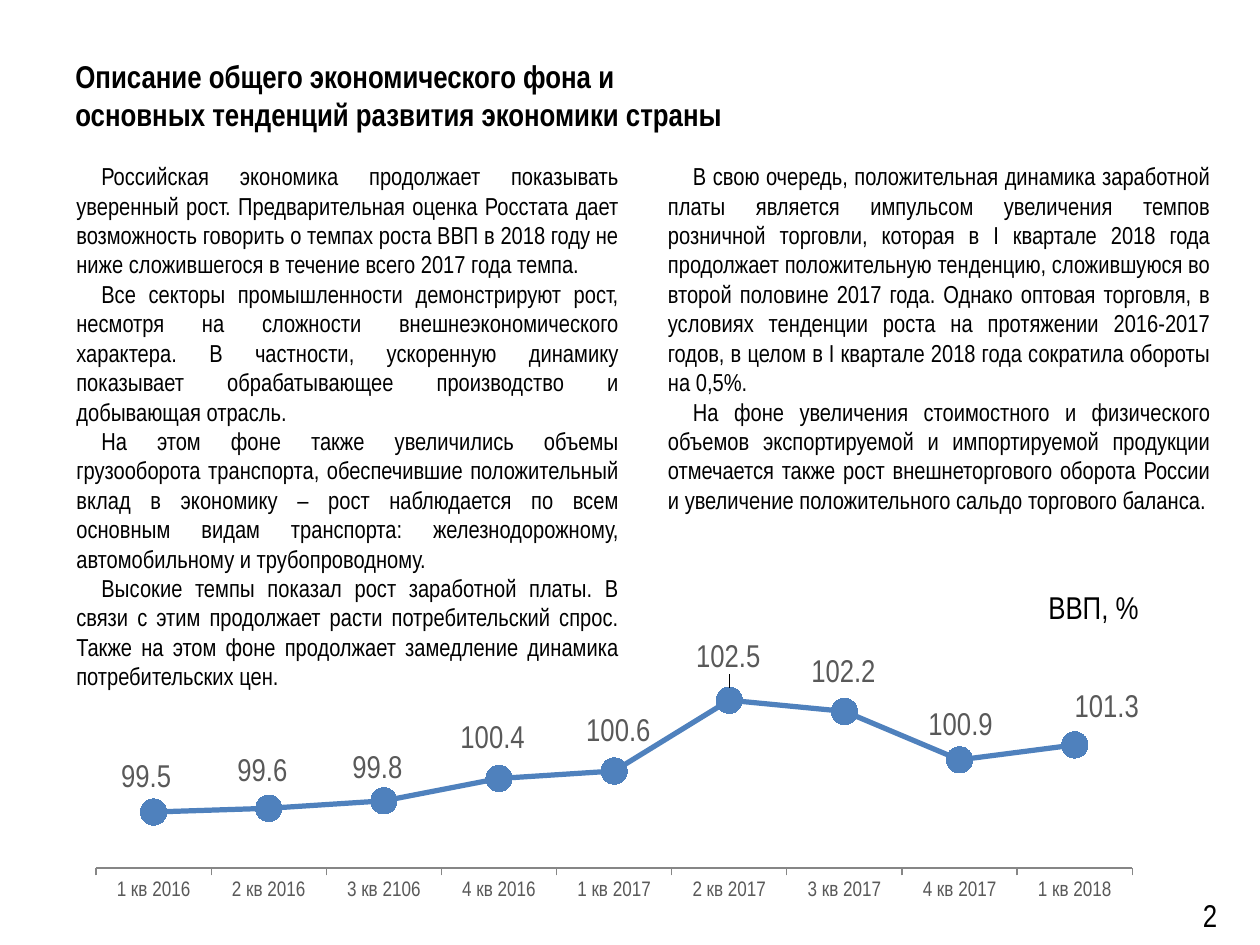
from typing import NamedTuple

from lxml.etree import SubElement
from pptx import Presentation
from pptx.chart.data import CategoryChartData
from pptx.dml.color import RGBColor
from pptx.enum.chart import (XL_CHART_TYPE, XL_LABEL_POSITION, XL_MARKER_STYLE,
                             XL_TICK_LABEL_POSITION, XL_TICK_MARK)
from pptx.enum.text import MSO_ANCHOR, MSO_AUTO_SIZE, PP_ALIGN
from pptx.oxml import parse_xml
from pptx.oxml.ns import nsdecls, qn
from pptx.util import Emu, Pt

SCALE = 914400 / 126
FONT = "Arial Narrow"
COLORS = {"text": "000000", "muted": "595959", "axis": "868686", "line": "4F81BD"}


class Box(NamedTuple):
    left: int
    top: int
    width: int
    height: int


class Mark(NamedTuple):
    name: str
    value: float
    dx: int
    dy: int


TITLE = ("Описание общего экономического фона и\v"
         "основных тенденций развития экономики страны")
BODY = (
    "Российская экономика продолжает показывать уверенный рост. Предварительная оценка "
    "Росстата дает возможность говорить о темпах роста ВВП в 2018 году не ниже "
    "сложившегося в течение всего 2017 года темпа.",
    "Все секторы промышленности демонстрируют рост, несмотря на сложности "
    "внешнеэкономического характера. В частности, ускоренную динамику показывает "
    "обрабатывающее производство и добывающая отрасль.",
    "На этом фоне также увеличились объемы грузооборота транспорта, обеспечившие "
    "положительный вклад в экономику – рост наблюдается по всем основным видам "
    "транспорта: железнодорожному, автомобильному и трубопроводному.",
    "Высокие темпы показал рост заработной платы. В связи с этим продолжает расти "
    "потребительский спрос. Также на этом фоне продолжает замедление динамика "
    "потребительских цен.",
    "В свою очередь, положительная динамика заработной платы является импульсом "
    "увеличения темпов розничной торговли, которая в I квартале 2018 года продолжает "
    "положительную тенденцию, сложившуюся во второй половине 2017 года. Однако оптовая "
    "торговля, в условиях тенденции роста на протяжении 2016-2017 годов, в целом в "
    "I квартале 2018 года сократила обороты на 0,5%.",
    "На фоне увеличения стоимостного и физического объемов экспортируемой и "
    "импортируемой продукции отмечается также рост внешнеторгового оборота России и "
    "увеличение положительного сальдо торгового баланса.",
)
MARKS = (
    Mark("1 кв 2016", 99.5, -8, 0),
    Mark("2 кв 2016", 99.6, -6, -2),
    Mark("3 кв 2106", 99.8, -6, 3),
    Mark("4 кв 2016", 100.4, -6, -5),
    Mark("1 кв 2017", 100.6, 4, -5),
    Mark("2 кв 2017", 102.5, -1, -8),
    Mark("3 кв 2017", 102.2, -1, -4),
    Mark("4 кв 2017", 100.9, 1, 0),
    Mark("1 кв 2018", 101.3, 32, -3),
)
PLOT = {"x": 0.03, "y": 0.13, "w": 0.97, "h": 0.72}


def px(size: int) -> Emu:
    """Turn pixels into EMU."""
    return Emu(round(size * SCALE))


def color(name: str) -> RGBColor:
    """Look up a named colour."""
    return RGBColor.from_string(COLORS[name])


def style(font, size: int, name: str, bold: bool = False) -> None:
    """Set the face, size, weight and colour of a font."""
    font.name, font.size, font.bold = FONT, Pt(size), bold
    font.color.rgb = color(name)


def write(slide, box: Box, *texts: str, size: int = 18, bold: bool = False,
          align=PP_ALIGN.LEFT, anchor=MSO_ANCHOR.TOP, grow: bool = False,
          indent: int = 0, cols: int = 1, gap: int = 0, lead: float = 0) -> None:
    """Add a text box with one paragraph for each text."""
    frame = slide.shapes.add_textbox(*map(px, box)).text_frame
    frame.word_wrap, frame.vertical_anchor = True, anchor
    frame.auto_size = MSO_AUTO_SIZE.SHAPE_TO_FIT_TEXT if grow else MSO_AUTO_SIZE.NONE
    if cols > 1:
        body = frame._txBody.find(qn("a:bodyPr"))
        body.set("numCol", str(cols))
        body.set("spcCol", str(px(gap)))
    for index, text in enumerate(texts):
        para = frame.add_paragraph() if index else frame.paragraphs[0]
        para.text, para.alignment = text, align
        if lead:
            para.line_spacing = Pt(lead)
        if indent:
            para._p.get_or_add_pPr().set("indent", str(px(indent)))
        for run in para.runs:
            style(run.font, size, "text", bold)


def layout(inner: bool = False, **parts: float):
    """Make a manual chart layout."""
    root = parse_xml(f"<c:layout {nsdecls('c')}><c:manualLayout/></c:layout>")
    if inner:
        SubElement(root[0], qn("c:layoutTarget")).set("val", "inner")
        for side in "xy":
            SubElement(root[0], qn(f"c:{side}Mode")).set("val", "edge")
    for key, value in parts.items():
        SubElement(root[0], qn(f"c:{key}")).set("val", str(value))
    return root


def draw(slide, box: Box) -> None:
    """Add the line chart of quarterly growth."""
    data = CategoryChartData(number_format="0.0")
    data.categories = [mark.name for mark in MARKS]
    data.add_series("ВВП, %", [mark.value for mark in MARKS])
    chart = slide.shapes.add_chart(
        XL_CHART_TYPE.LINE_MARKERS, *map(px, box), data).chart
    chart.has_legend = chart.has_title = False
    style(chart.font, 18, "text")

    area = chart._chartSpace.chart.plotArea
    for old in area.findall(qn("c:layout")):
        area.remove(old)
    area.insert(0, layout(True, **PLOT))

    scale = chart.value_axis
    scale.minimum_scale, scale.maximum_scale = 98, 107
    scale.has_major_gridlines = scale.visible = False
    axis = chart.category_axis
    axis.major_tick_mark = XL_TICK_MARK.OUTSIDE
    axis.tick_label_position = XL_TICK_LABEL_POSITION.LOW
    axis.format.line.color.rgb = color("axis")
    style(axis.tick_labels.font, 12, "muted")

    chart.plots[0].vary_by_categories = False
    line = chart.plots[0].series[0]
    line.smooth = False
    line.format.line.width = Pt(3)
    line.format.line.color.rgb = color("line")
    dot = line.marker
    dot.style, dot.size = XL_MARKER_STYLE.CIRCLE, 15
    dot.format.fill.solid()
    dot.format.fill.fore_color.rgb = color("line")
    dot.format.line.color.rgb = color("line")

    for index, mark in enumerate(MARKS):
        label = line.points[index].data_label
        style(label.font, 18, "muted")
        label.position = XL_LABEL_POSITION.ABOVE
        shift = layout(x=round(mark.dx / box.width, 3), y=round(mark.dy / box.height, 3))
        label._dLbl.find(qn("c:idx")).addnext(shift)


def main() -> None:
    """Build the slide and save it."""
    deck = Presentation()
    deck.slide_width, deck.slide_height = px(1260), px(945)
    slide = deck.slides.add_slide(deck.slide_layouts[6])
    write(slide, Box(63, 16, 1134, 158), TITLE, bold=True, anchor=MSO_ANCHOR.MIDDLE)
    draw(slide, Box(64, 472, 1075, 466))
    write(slide, Box(64, 155, 1159, 561), *BODY, size=14, align=PP_ALIGN.JUSTIFY,
          grow=True, indent=25, cols=2, gap=49)
    write(slide, Box(1160, 859, 100, 96), "2", align=PP_ALIGN.CENTER,
          anchor=MSO_ANCHOR.MIDDLE, lead=30.1)
    write(slide, Box(1036, 582, 123, 50), "ВВП, %", grow=True)
    deck.save("out.pptx")


if __name__ == "__main__":
    main()
